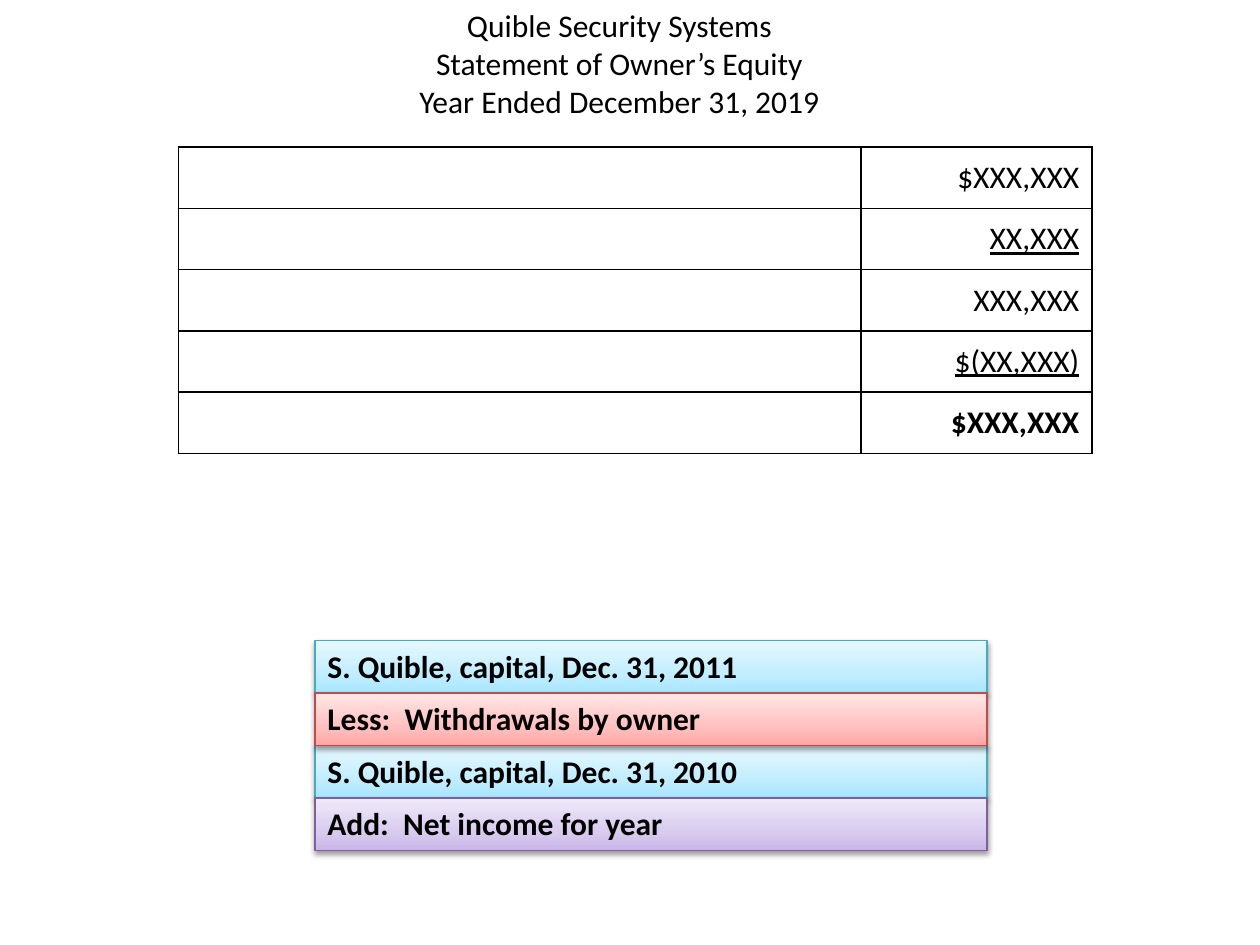
from copy import deepcopy

from lxml import etree
from pptx import Presentation
from pptx.dml.color import RGBColor
from pptx.enum.shapes import MSO_SHAPE
from pptx.enum.text import MSO_ANCHOR, MSO_AUTO_SIZE, PP_ALIGN
from pptx.oxml.ns import qn
from pptx.util import Inches, Pt

RECT = MSO_SHAPE.RECTANGLE
TOP, MIDDLE = MSO_ANCHOR.TOP, MSO_ANCHOR.MIDDLE
FIXED = MSO_AUTO_SIZE.NONE
LEFT, CENTER, RIGHT = PP_ALIGN.LEFT, PP_ALIGN.CENTER, PP_ALIGN.RIGHT
UNIT = 1 / 12  # grid step in inches: 120 columns by 90 rows


def grid(*steps):
    return [Inches(step * UNIT) for step in steps]


def color(code):
    return RGBColor.from_string(code)


def node(parent, tag, **attrs):
    return etree.SubElement(parent, qn(tag), attrs)


def write(frame, text, size=18, font="Calibri", ink="000000",
          bold=False, line=False, align=LEFT):
    frame.text = text
    par = frame.paragraphs[0]
    par.alignment = align
    for run in par.runs:
        run.font.size, run.font.name = Pt(size), font
        run.font.bold, run.font.underline = bold, line
        run.font.color.rgb = color(ink)


class Page:
    ink = "000000"

    def __init__(self, deck):
        self.slide = deck.slides.add_slide(deck.slide_layouts[5])

    def title(self, lines, *box):
        shape = self.slide.shapes.title
        shape.left, shape.top, shape.width, shape.height = grid(*box)
        frame = shape.text_frame
        write(frame, "\v".join(lines), ink=self.ink, align=CENTER)
        frame.auto_size, frame.vertical_anchor = FIXED, TOP

    def border(self, cell):
        props = cell._tc.get_or_add_tcPr()
        for spot, side in enumerate(("a:lnL", "a:lnR", "a:lnT", "a:lnB")):
            edge = node(props, side, w=str(Pt(1)))
            node(node(edge, "a:solidFill"), "a:srgbClr", val=self.ink)
            props.insert(spot, edge)

    def table(self, rows, widths, *box):
        table = self.slide.shapes.add_table(
            len(rows), len(widths), *grid(*box)).table
        table.first_row = table.horz_banding = False
        for col, width in zip(table.columns, grid(*widths)):
            col.width = width
        for row, (text, style) in enumerate(rows):
            for cell in table.rows[row].cells:
                cell.fill.background()
                cell.vertical_anchor = MIDDLE
                self.border(cell)
            write(table.cell(row, 1).text_frame, text, ink=self.ink,
                  align=RIGHT, **style)

    def label(self, text, tones, edge, *box):
        shape = self.slide.shapes.add_shape(RECT, *grid(*box))
        shape.line.color.rgb, shape.line.width = color(edge), Pt(0.75)
        write(shape.text_frame, text, ink=self.ink, bold=True)
        shape.text_frame.vertical_anchor = TOP
        self.blend(shape, tones)
        self.shade(shape)

    def blend(self, shape, tones):
        fill = shape.fill
        fill.gradient()
        fill.gradient_angle = 90
        stops = next(shape._element.spPr.iter(qn("a:gsLst")))
        stops.insert(1, deepcopy(stops[0]))
        for stop, spot, tone in zip(fill.gradient_stops, (0, 0.35, 1), tones):
            stop.position = spot
            stop.color.rgb = color(tone)

    def shade(self, shape):
        shape.shadow.inherit = False
        effect = shape._element.spPr.find(qn("a:effectLst"))
        drop = node(effect, "a:outerShdw", blurRad=str(Pt(3.1)),
                    dist=str(Pt(1.6)), dir="5400000", rotWithShape="0")
        tint = node(drop, "a:srgbClr", val="000000")
        node(tint, "a:alpha", val="38000")


def main():
    deck = Presentation()
    deck.slide_width, deck.slide_height = grid(120, 90)
    page = Page(deck)

    # Statement heading
    page.title(["Quible Security Systems", "Statement of Owner’s Equity",
                "Year Ended December 31, 2019"], 8, 0, 102, 13)

    # Amounts, with the line names left open
    amounts = [("$XXX,XXX", {}), ("XX,XXX", {"line": True}), ("XXX,XXX", {}),
               ("$(XX,XXX)", {"line": True}), ("$XXX,XXX", {"bold": True})]
    page.table(amounts, (65, 22), 17, 14, 87, 29.2)

    # Stacked line names to place, from back to front
    blue = ("A7E6FF", "C1EDFF", "E7F8FF"), "46AAC5"
    violet = ("C9B5E8", "D8CBEE", "F0EAF9"), "7D60A0"
    red = ("FFA6A5", "FFC0BF", "FFE7E7"), "BF4C48"
    labels = [(2, "S. Quible, capital, Dec. 31, 2010", blue),
              (0, "S. Quible, capital, Dec. 31, 2011", blue),
              (3, "Add:  Net income for year", violet),
              (1, "Less:  Withdrawals by owner", red)]
    for place, text, (tones, edge) in labels:
        page.label(text, tones, edge, 30, 61 + 5 * place, 64, 5)

    deck.save("out.pptx")


if __name__ == "__main__":
    main()
